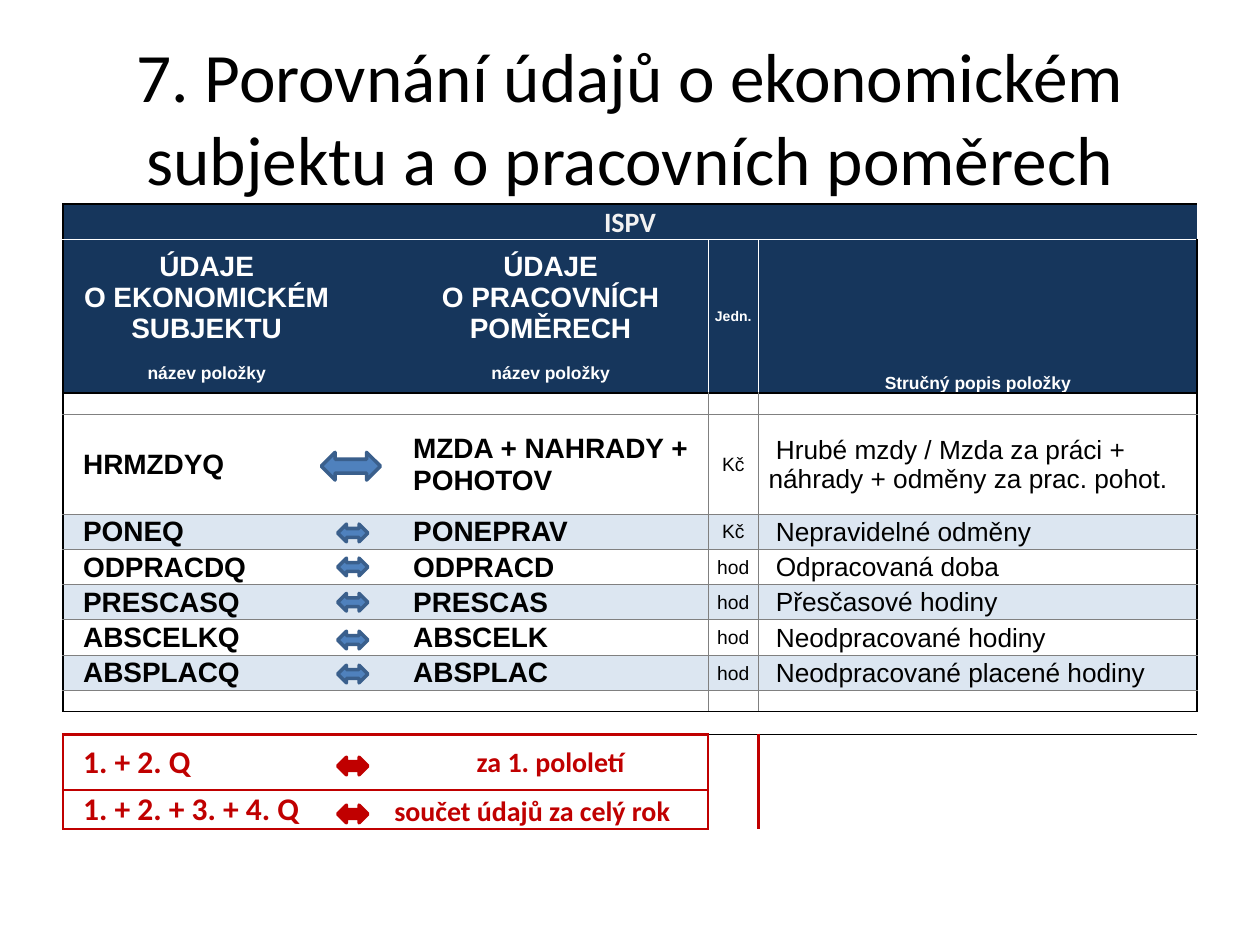
from dataclasses import dataclass
from lxml import etree
from pptx import Presentation, util as u
from pptx.dml.color import RGBColor
from pptx.enum import shapes, text
from pptx.oxml.ns import qn

In = u.Inches
LEFT, CENTER = text.PP_ALIGN.LEFT, text.PP_ALIGN.CENTER
MIDDLE, BOTTOM = text.MSO_ANCHOR.MIDDLE, text.MSO_ANCHOR.BOTTOM


@dataclass(frozen=True)
class Theme:
    black: str = "000000"
    white: str = "FFFFFF"
    navy: str = "16365C"
    pale: str = "F2F2F2"
    band: str = "DCE6F1"
    grey: str = "808080"
    red: str = "C00000"
    blue: str = "4F81BD"
    blue_line: str = "3A5F8C"
    heading: str = "Calibri"
    body: str = "Arial"
    title: float = 39.6
    large: float = 18
    code: float = 16
    description: float = 15
    unit: float = 11
    note: float = 10
    small: float = 8


T = Theme()
COLUMNS = [2.28, 0.34, 2.5, 0.4, 3.48]
ROWS = [0.28, 1.22, 0.17, 0.79] + [0.28] * 5 + [0.17, 0.18, 0.44, 0.31]
ITEMS = [
    ("HRMZDYQ", "MZDA + NAHRADY + POHOTOV", "Kč",
     " Hrubé mzdy / Mzda za práci + náhrady + odměny za prac. pohot."),
    ("PONEQ", "PONEPRAV", "Kč", " Nepravidelné odměny"),
    ("ODPRACDQ", "ODPRACD", "hod", " Odpracovaná doba"),
    ("PRESCASQ", "PRESCAS", "hod", " Přesčasové hodiny"),
    ("ABSCELKQ", "ABSCELK", "hod", " Neodpracované hodiny"),
    ("ABSPLACQ", "ABSPLAC", "hod", " Neodpracované placené hodiny"),
]
# boundary, first and end of the stretch, colour, width
HORIZONTAL = [
    (0, 0, 5, T.black, 1), (1, 0, 5, T.white, 0.5), (2, 0, 5, T.black, 1),
    *[(n, 0, 5, T.grey, 0.5) for n in range(3, 10)],
    (10, 0, 5, T.black, 1), (11, 0, 3, T.red, 1.5), (13, 0, 3, T.red, 1.5),
]
VERTICAL = [
    *[(n, 0, 10, T.black, 1) for n in (0, 5)],
    *[(n, 1, 2, T.white, 0.5) for n in (3, 4)],
    *[(n, 2, 10, T.grey, 0.5) for n in (3, 4)],
    *[(n, 11, 13, T.red, 1.5) for n in (0, 3)],
]


def write(p, words, size, font=T.body, color=T.black, bold=False, align=LEFT, before=0):
    p.text = words
    p.alignment = align
    p.space_before = u.Pt(before)
    for r in p.runs:
        r.font.size, r.font.name, r.font.bold = u.Pt(size), font, bold
        r.font.color.rgb = RGBColor.from_string(color)


def fill_cell(cell, words, size, anchor=MIDDLE, inset=0.01, **fmt):
    cell.vertical_anchor = anchor
    cell.margin_left = In(inset)
    write(cell.text_frame.paragraphs[0], words, size, **fmt)


def add_title(s, words):
    tf = s.shapes.add_textbox(In(0.5), In(0.3), In(9), In(1.25)).text_frame
    tf.word_wrap = True
    tf.vertical_anchor = MIDDLE
    write(tf.paragraphs[0], words, T.title, font=T.heading, align=CENTER)


def add_grid(s):
    """Add the empty table with its sizes, insets and row fills."""
    frame = s.shapes.add_table(len(ROWS), len(COLUMNS), In(0.5), In(1.62),
                               In(sum(COLUMNS)), In(sum(ROWS)))
    table = frame.table
    table.first_row = table.horz_banding = False
    style = table._tbl.tblPr.find(qn("a:tableStyleId"))
    style.text = "{2D5ABB26-0587-4C30-8999-92F81FD0307C}"
    for column, width in zip(table.columns, COLUMNS):
        column.width = In(width)
    fills = [T.navy] * 2 + [None] + [T.white, T.band] * 3 + [None] * 4
    for row, height, color in zip(table.rows, ROWS, fills):
        row.height = In(height)
        for cell in row.cells:
            cell.margin_left = cell.margin_right = cell.margin_top = In(0.01)
            cell.margin_bottom = 0
            p = cell.text_frame.paragraphs[0]
            etree.SubElement(p._p, qn("a:endParaRPr"), sz=str(T.small * 100))
            if color:
                cell.fill.solid()
                cell.fill.fore_color.rgb = RGBColor.from_string(color)
            else:
                cell.fill.background()
    return table


def draw_borders(table):
    """Give each rule to the cells on both of its sides."""
    edges = {}
    for n, start, end, color, width in HORIZONTAL:
        for col in range(start, end):
            edges[n - 1, col, "lnB"] = edges[n, col, "lnT"] = color, width
    for n, start, end, color, width in VERTICAL:
        for row in range(start, end):
            edges[row, n - 1, "lnR"] = edges[row, n, "lnL"] = color, width
    for row in range(len(ROWS)):
        for col in range(len(COLUMNS)):
            tc_pr = table.cell(row, col)._tc.get_or_add_tcPr()
            position = 0
            for side in ("lnL", "lnR", "lnT", "lnB"):
                if (row, col, side) not in edges:
                    continue
                color, width = edges[row, col, side]
                ln = etree.Element(qn("a:" + side), w=str(u.Pt(width)))
                solid = etree.SubElement(ln, qn("a:solidFill"))
                etree.SubElement(solid, qn("a:srgbClr"), val=color)
                tc_pr.insert(position, ln)
                position += 1


def fill_header(table):
    fmt = dict(color=T.white, bold=True, align=CENTER)
    table.cell(0, 0).merge(table.cell(0, 4))
    fill_cell(table.cell(0, 0), "ISPV", T.code, font=T.heading,
              color=T.pale, bold=True, align=CENTER)
    for col, words in ((0, "ÚDAJE\vO EKONOMICKÉM SUBJEKTU"),
                       (2, "ÚDAJE\vO PRACOVNÍCH POMĚRECH")):
        cell = table.cell(1, col)
        fill_cell(cell, words, T.code, **fmt)
        write(cell.text_frame.add_paragraph(), "název položky", T.note, before=11, **fmt)
    fill_cell(table.cell(1, 3), "Jedn.", T.small, **fmt)
    fill_cell(table.cell(1, 4), "Stručný popis položky", T.note, anchor=BOTTOM, **fmt)


def fill_items(table):
    for row, (subject, relation, unit, description) in enumerate(ITEMS, 3):
        fill_cell(table.cell(row, 0), subject, T.code, inset=0.16, bold=True)
        fill_cell(table.cell(row, 2), relation, T.code, inset=0.16, bold=True)
        fill_cell(table.cell(row, 3), unit, T.unit, align=CENTER)
        fill_cell(table.cell(row, 4), description, T.description, inset=0.08)


def fill_periods(table):
    periods = [("1. + 2. Q", "za 1. pololetí", CENTER, MIDDLE),
               ("1. + 2. + 3. + 4. Q", "součet údajů za celý rok", LEFT, BOTTOM)]
    for row, (quarters, total, align, anchor) in enumerate(periods, 11):
        fmt = dict(font=T.heading, color=T.red, bold=True, anchor=anchor)
        fill_cell(table.cell(row, 0), quarters, T.large, inset=0.16, **fmt)
        fill_cell(table.cell(row, 2), total, T.code, align=align, **fmt)


def add_arrow(s, left, top, width=0.24, height=0.14, color=T.blue, line=T.blue_line):
    sp = s.shapes.add_shape(shapes.MSO_SHAPE.LEFT_RIGHT_ARROW,
                            In(left), In(top), In(width), In(height))
    sp.shadow.inherit = False
    sp.fill.solid()
    sp.fill.fore_color.rgb = RGBColor.from_string(color)
    sp.line.color.rgb = RGBColor.from_string(line)
    sp.line.width = u.Pt(2)


def main():
    prs = Presentation()
    prs.slide_width, prs.slide_height = In(10), In(7.5)
    s = prs.slides.add_slide(prs.slide_layouts[6])
    add_title(s, "7. Porovnání údajů o ekonomickém subjektu a o pracovních poměrech")
    table = add_grid(s)
    fill_header(table)
    fill_items(table)
    fill_periods(table)
    draw_borders(table)
    add_arrow(s, 2.55, 3.59, 0.47, 0.22)
    for top in (4.16, 4.43, 4.71, 5.01, 5.28):
        add_arrow(s, 2.68, top)
    for top in (6.01, 6.39):
        add_arrow(s, 2.68, top, color=T.red, line=T.red)
    prs.save("out.pptx")


if __name__ == "__main__":
    main()
